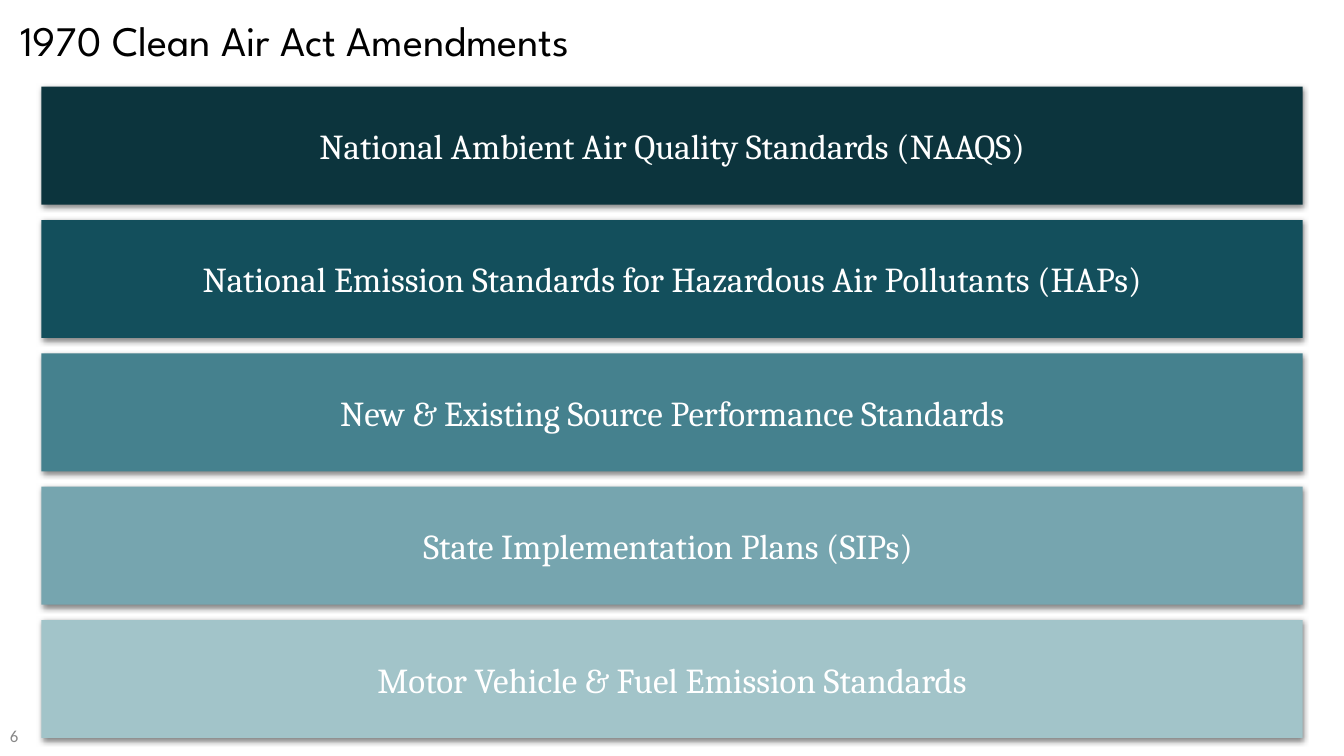
from lxml import etree
from pptx import Presentation
from pptx import util as u
from pptx.dml.color import RGBColor
from pptx.enum import shapes, text
from pptx.oxml import ns

COLORS = {
    "title": "000000", "number": "888888", "band_text": "FFFFFF", "shadow": "000000",
    "naaqs": "0C343D", "haps": "134F5C", "sources": "45818E",
    "sips": "76A5AF", "vehicles": "A2C4C9",
}
FORMATS = {
    "title": {"name": "League Spartan", "size": u.Pt(30)},
    "number": {"name": "Calibri", "size": u.Pt(12)},
    "band_text": {"name": "Cambria", "size": u.Pt(25)},
}
COLUMNS, ROWS = 133.3, 75
BAND_LEFT, BAND_TOP, BAND_WIDTH, BAND_HEIGHT = 4.1, 8.6, 125.1, 11.7
BAND_PITCH = 13.23
BANDS = [
    ("naaqs", "National Ambient Air Quality Standards (NAAQS)"),
    ("haps", "National Emission Standards for Hazardous Air Pollutants (HAPs)"),
    ("sources", "New & Existing Source Performance Standards"),
    ("sips", "State Implementation Plans (SIPs) "),
    ("vehicles", "Motor Vehicle & Fuel Emission Standards"),
]


class SlideBuilder:
    def __init__(self, presentation):
        self.width = presentation.slide_width
        self.height = presentation.slide_height
        self.slide = presentation.slides.add_slide(presentation.slide_layouts[6])

    def place(self, left, top, columns, rows):
        across, down = self.width / COLUMNS, self.height / ROWS
        return [round(length) for length in
                (left * across, top * down, columns * across, rows * down)]

    def set_text(self, shape, wording, style, inset, anchor, **paragraph_format):
        frame = shape.text_frame
        frame_format = {"word_wrap": True, "vertical_anchor": anchor}
        for side, length in zip(("left", "top", "right", "bottom"), inset):
            frame_format["margin_" + side] = u.Inches(length)
        paragraph = frame.paragraphs[0]
        paragraph.text = wording
        font = paragraph.runs[0].font
        for target, values in ((frame, frame_format), (paragraph, paragraph_format),
                               (font, FORMATS[style])):
            for attribute, value in values.items():
                setattr(target, attribute, value)
        font.color.rgb = RGBColor.from_string(COLORS[style])

    def label(self, wording, style, area, inset, anchor, **paragraph_format):
        shape = self.slide.shapes.add_textbox(*self.place(*area))
        self.set_text(shape, wording, style, inset, anchor, **paragraph_format)

    def band(self, wording, color, area):
        shape = self.slide.shapes.add_shape(
            shapes.MSO_SHAPE.RECTANGLE, *self.place(*area))
        shape.fill.solid()
        shape.fill.fore_color.rgb = RGBColor.from_string(COLORS[color])
        shape.line.fill.background()
        self.cast_shadow(shape)
        self.set_text(shape, wording, "band_text", [0.1] * 4, text.MSO_ANCHOR.MIDDLE,
                      alignment=text.PP_ALIGN.CENTER)

    def cast_shadow(self, shape):
        shape.shadow.inherit = False
        effects = shape.element.spPr.find(ns.qn("a:effectLst"))
        shadow = etree.SubElement(
            effects, ns.qn("a:outerShdw"), blurRad=str(u.Pt(4.5)), dist=str(u.Pt(1.5)),
            dir="5400000", algn="bl", rotWithShape="0")
        color = etree.SubElement(shadow, ns.qn("a:srgbClr"), val=COLORS["shadow"])
        etree.SubElement(color, ns.qn("a:alpha"), val="50000")


def main():
    presentation = Presentation()
    presentation.slide_width = u.Inches(13.33)
    presentation.slide_height = u.Inches(7.5)
    builder = SlideBuilder(presentation)
    builder.label("1970 Clean Air Act Amendments", "title", (0, 0, COLUMNS, 12.2),
                  [0.2] * 4, text.MSO_ANCHOR.TOP, line_spacing=0.9)
    builder.label("6", "number", (0, 71, 30, 4), (0.1, 0.05, 0.1, 0.05),
                  text.MSO_ANCHOR.MIDDLE)
    for index, (color, wording) in enumerate(BANDS):
        builder.band(wording, color, (BAND_LEFT, BAND_TOP + index * BAND_PITCH,
                                      BAND_WIDTH, BAND_HEIGHT))
    presentation.save("out.pptx")


if __name__ == "__main__":
    main()
